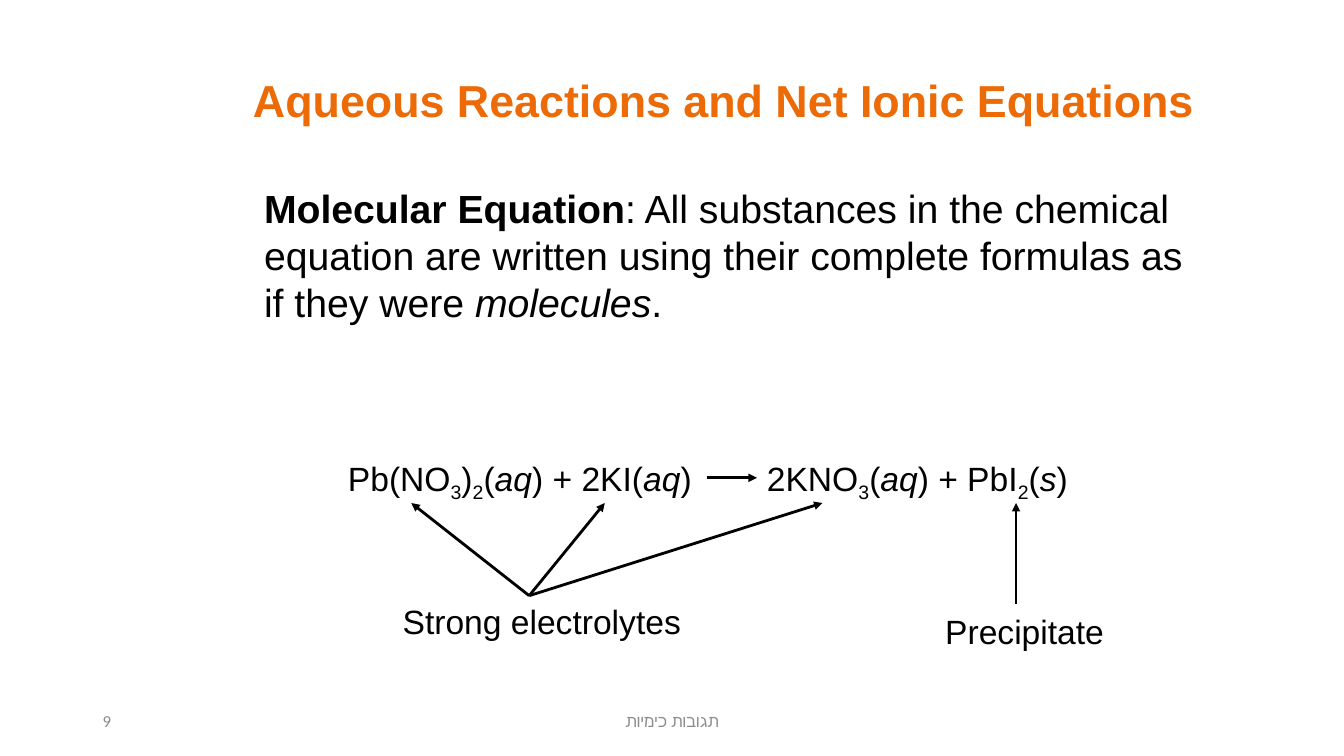
from dataclasses import dataclass

from pptx import Presentation
from pptx.dml.color import RGBColor
from pptx.enum.shapes import MSO_CONNECTOR
from pptx.enum.text import MSO_ANCHOR as Anchor, MSO_AUTO_SIZE as AutoSize, PP_ALIGN as Align
from pptx.oxml.ns import qn
from pptx.util import Pt
from lxml.etree import SubElement


@dataclass(frozen=True)
class Theme:
    font: str = "Arial"
    footer_font: str = "Calibri"
    accent: RGBColor = RGBColor(0xED, 0x6B, 0x06)
    ink: RGBColor = RGBColor(0, 0, 0)
    muted: RGBColor = RGBColor(0x8C, 0x8C, 0x8C)
    paper: RGBColor = RGBColor(0xFF, 0xFF, 0xFF)
    title_size: int = 32
    body_size: int = 28
    label_size: int = 24
    footer_size: int = 12


THEME = Theme()
BOLD, ITALIC, SUB = "bold", "italic", "sub"


def write_text(holder, parts, size=THEME.label_size, color=THEME.ink, font=THEME.font,
               align=Align.LEFT, anchor=Anchor.TOP, wrap=True, rtl=False, bullet=True):
    """Fill a shape with one paragraph made of (text, style) parts."""
    frame = holder.text_frame
    frame.auto_size = AutoSize.NONE
    frame.word_wrap = wrap
    frame.vertical_anchor = anchor
    paragraph = frame.paragraphs[0]
    paragraph.alignment = align
    paragraph.space_before = Pt(0)
    properties = paragraph._p.get_or_add_pPr()
    if rtl:
        properties.set("rtl", "1")
    if not bullet:
        properties.set("marL", "0")
        properties.set("indent", "0")
        SubElement(properties, qn("a:buNone"))
    for text, style in parts:
        run = paragraph.add_run()
        run.text = text
        run.font.name = font
        run.font.size = Pt(size)
        run.font.color.rgb = color
        run.font.bold = style == BOLD
        run.font.italic = style == ITALIC
        if style == SUB:
            run._r.get_or_add_rPr().set("baseline", "-25000")


def place(holder, left, top, width, height):
    holder.left, holder.top = Pt(left), Pt(top)
    holder.width, holder.height = Pt(width), Pt(height)


def add_label(slide, box, parts, **text_format):
    label = slide.shapes.add_textbox(*map(Pt, box))
    write_text(label, parts, **text_format)
    return label


def add_arrow(slide, start, end):
    arrow = slide.shapes.add_connector(MSO_CONNECTOR.STRAIGHT, *map(Pt, (*start, *end)))
    arrow.line.color.rgb = THEME.ink
    arrow.line.width = Pt(2)
    SubElement(arrow.line._get_or_add_ln(), qn("a:tailEnd"), type="triangle")
    SubElement(arrow._element.spPr, qn("a:effectLst"))
    return arrow


def add_heading(slide):
    title = slide.shapes.title
    place(title, 144.7, 48.2, 720, 46)
    title.fill.solid()
    title.fill.fore_color.rgb = THEME.paper
    title.line.color.rgb = THEME.paper
    title.line.width = Pt(1)
    title.text_frame.margin_left = Pt(36)
    write_text(title, [("Aqueous Reactions and Net Ionic Equations", BOLD)],
               size=THEME.title_size, color=THEME.accent, anchor=Anchor.MIDDLE)


def add_definition(slide):
    definition = slide.placeholders[1]
    place(definition, 181.4, 128.2, 682.6, 108.7)
    write_text(definition, [
        ("Molecular Equation", BOLD),
        (": All substances in the chemical equation are written using "
         "their complete formulas as if they were ", None),
        ("molecules", ITALIC), (".", None),
    ], size=THEME.body_size, bullet=False)


def add_equation(slide):
    formula_top, formula_height = 323.3, 36
    formula_bottom = formula_top + formula_height
    arrow_y = formula_top + formula_height / 2

    # Reactants and products
    add_label(slide, (236.2, formula_top, 265, formula_height), [
        ("Pb(NO", None), ("3", SUB), (")", None), ("2", SUB), ("(", None),
        ("aq", ITALIC), (") + 2KI(", None), ("aq", ITALIC), (")", None),
    ], align=Align.RIGHT, wrap=False)
    products = add_label(slide, (540.7, formula_top, 234, formula_height), [
        ("2KNO", None), ("3", SUB), ("(", None), ("aq", ITALIC), (") + PbI", None),
        ("2", SUB), ("(", None), ("s", ITALIC), (")", None),
    ], wrap=False)
    reaction = add_arrow(slide, (504.7, arrow_y), (540.7, arrow_y))
    reaction.end_connect(products, 1)

    # Captions below the formulas
    caption_format = {"align": Align.CENTER, "anchor": Anchor.MIDDLE, "wrap": False}
    add_label(slide, (279.4, 425.5, 215.2, 36), [("Strong electrolytes", None)], **caption_format)
    add_label(slide, (667.4, 432.7, 128.9, 36), [("Precipitate", None)], **caption_format)

    # Pointers from the captions to the formulas
    for electrolyte_x in (293.8, 587.5, 432):
        add_arrow(slide, (378, 425.5), (electrolyte_x, formula_bottom))
    add_arrow(slide, (725.8, 431.3), (725.8, formula_bottom))


def add_footer(slide):
    footer_format = {"size": THEME.footer_size, "color": THEME.muted,
                     "font": THEME.footer_font, "anchor": Anchor.MIDDLE}
    add_label(slide, (318.2, 500.5, 324, 28.8), [("תגובות כימיות", None)],
              align=Align.CENTER, rtl=True, **footer_format)
    add_label(slide, (66.2, 500.5, 216, 28.8), [("9", None)], **footer_format)


def main():
    deck = Presentation()
    deck.slide_width, deck.slide_height = Pt(960), Pt(540)
    slide = deck.slides.add_slide(deck.slide_layouts[1])
    add_heading(slide)
    add_definition(slide)
    add_equation(slide)
    add_footer(slide)
    deck.save("out.pptx")


if __name__ == "__main__":
    main()
